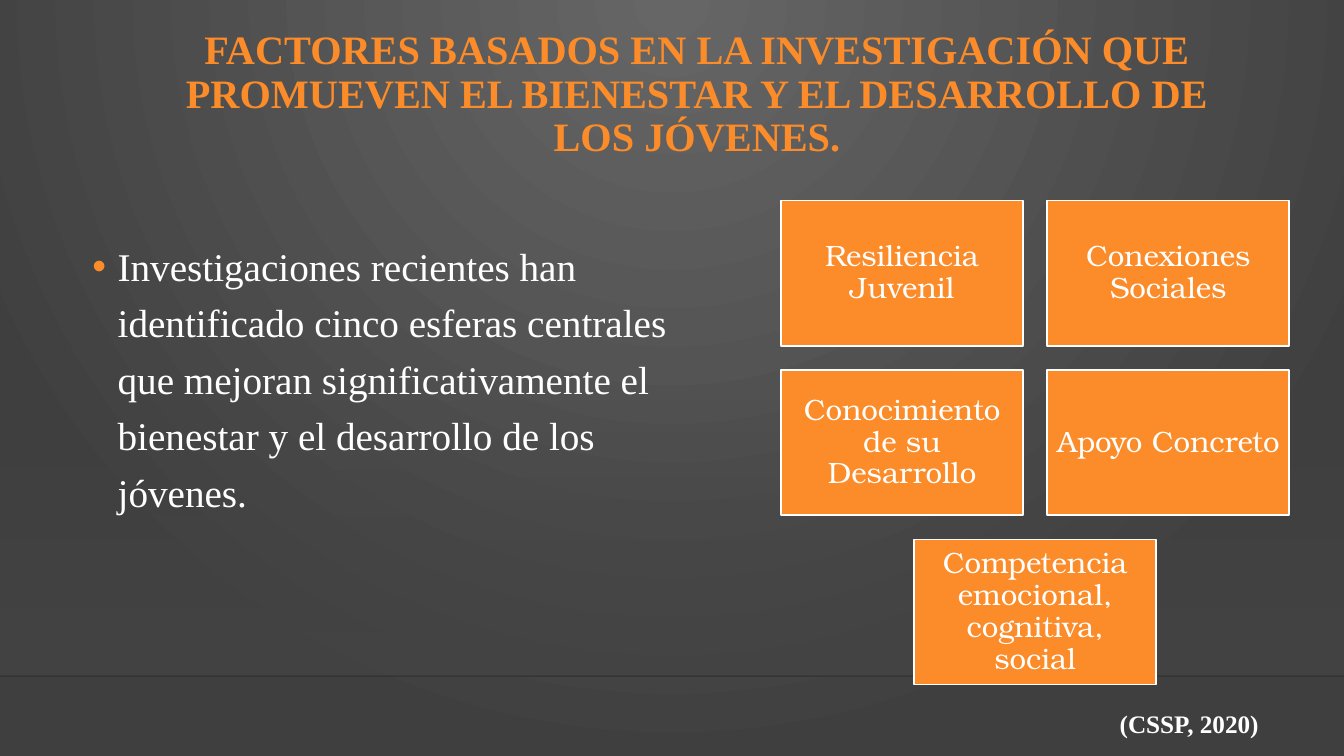
from dataclasses import dataclass

import lxml.etree
import pptx
import pptx.dml.color
import pptx.enum.dml
import pptx.enum.shapes
import pptx.enum.text
import pptx.oxml.ns
import pptx.util

Pt = pptx.util.Pt
qn = pptx.oxml.ns.qn
PP_ALIGN = pptx.enum.text.PP_ALIGN
ANCHOR = pptx.enum.text.MSO_ANCHOR
RECTANGLE = pptx.enum.shapes.MSO_SHAPE.RECTANGLE

COLORS = {
    "orange": "FB8C29",
    "white": "FFFFFF",
    "glow": "666666",
    "charcoal": "3F3F3F",
    "floor": "454545",
    "horizon": "000001",
}
SERIF = "Times New Roman"
BOX_FONT = "TeX Gyre Bonum"
SLIDE_W, SLIDE_H = 960, 540
BOX_W, BOX_H, BOX_GAP = 172.8, 103.7, 17.3
GRID_LEFT, GRID_TOP = 558, 143.3


@dataclass
class TextBlock:
    text: str
    left: float
    top: float
    width: float
    height: float
    size: float
    color: str = "white"
    bold: bool = False
    wrap: bool = True
    align: PP_ALIGN = PP_ALIGN.LEFT
    anchor: ANCHOR = ANCHOR.TOP
    line_spacing: float = 1.0
    bullet: bool = False


@dataclass
class FactorBox:
    text: str
    column: float
    row: int


TEXT_BLOCKS = [
    TextBlock("FACTORES BASADOS EN LA INVESTIGACIÓN QUE PROMUEVEN EL BIENESTAR "
              "Y EL DESARROLLO DE LOS JÓVENES.",
              114.5, 26.6, 766.8, 82.8, 28.8, color="orange", bold=True,
              align=PP_ALIGN.CENTER, anchor=ANCHOR.MIDDLE, line_spacing=0.9),
    TextBlock("Investigaciones recientes han identificado cinco esferas centrales "
              "que mejoran significativamente el bienestar y el desarrollo de los "
              "jóvenes.",
              59, 162.7, 439.2, 211.7, 28, line_spacing=1.2, bullet=True),
    TextBlock("(CSSP, 2020)", 792.7, 502.6, 115.2, 28.8, 18, bold=True, wrap=False),
]
FACTORS = [
    FactorBox("Resiliencia Juvenil", 0, 0),
    FactorBox("Conexiones Sociales", 1, 0),
    FactorBox("Conocimiento de su Desarrollo", 0, 1),
    FactorBox("Apoyo Concreto", 1, 1),
    FactorBox("Competencia emocional, cognitiva, social", 0.5, 2),
]


def rgb(name: str) -> pptx.dml.color.RGBColor:
    return pptx.dml.color.RGBColor.from_string(COLORS[name])


def set_alpha(parent, percents: list[int]) -> None:
    for color, percent in zip(parent.iter(qn("a:srgbClr")), percents):
        lxml.etree.SubElement(color, qn("a:alpha"), val=str(percent * 1000))


def set_gradient(fill, start: str, end: str) -> None:
    fill.gradient()
    for stop, name in zip(fill.gradient_stops, (start, end)):
        stop.color.rgb = rgb(name)


def style_paragraph(paragraph, font: str, size: float, color: str, bold: bool,
                    align: PP_ALIGN, line_spacing: float) -> None:
    paragraph.alignment = align
    paragraph.line_spacing = line_spacing
    paragraph.font.name = font
    paragraph.font.size = Pt(size)
    paragraph.font.bold = bold
    paragraph.font.color.rgb = rgb(color)


def add_bullet(paragraph) -> None:
    properties = paragraph._p.get_or_add_pPr()
    properties.set("marL", str(Pt(18)))
    properties.set("indent", str(-Pt(18)))
    bullet_color = lxml.etree.SubElement(properties, qn("a:buClr"))
    lxml.etree.SubElement(bullet_color, qn("a:srgbClr"), val=COLORS["orange"])
    lxml.etree.SubElement(properties, qn("a:buFont"), typeface="Arial")
    lxml.etree.SubElement(properties, qn("a:buChar"), char="•")


def draw_backdrop(slide) -> None:
    # Radial glow from the top centre
    set_gradient(slide.background.fill, "glow", "charcoal")
    gradient = next(slide.background._cSld.iter(qn("a:gradFill")))
    linear = gradient.find(qn("a:lin"))
    circle = lxml.etree.Element(qn("a:path"), {"path": "circle"})
    lxml.etree.SubElement(circle, qn("a:fillToRect"),
                          l="43000", t="0", r="43000", b="100000")
    gradient.replace(linear, circle)

    # Floor shade that fades in downwards
    floor_top, horizon_y = 285.1, 483
    floor = slide.shapes.add_shape(RECTANGLE, 0, Pt(floor_top), Pt(SLIDE_W),
                                   Pt(horizon_y - floor_top))
    floor.shadow.inherit = False
    floor.line.fill.background()
    set_gradient(floor.fill, "floor", "floor")
    floor.fill.gradient_angle = 270
    set_alpha(floor._element.spPr, [0, 80])

    # Horizon line
    horizon = slide.shapes.add_connector(pptx.enum.shapes.MSO_CONNECTOR.STRAIGHT,
                                         0, Pt(horizon_y), Pt(SLIDE_W), Pt(horizon_y))
    horizon.line.width = Pt(1)
    horizon.line.color.rgb = rgb("horizon")
    set_alpha(horizon._element.spPr, [20])
    lxml.etree.SubElement(horizon._element.spPr, qn("a:effectLst"))


def draw_text(slide, block: TextBlock) -> None:
    frame = slide.shapes.add_textbox(Pt(block.left), Pt(block.top), Pt(block.width),
                                     Pt(block.height)).text_frame
    frame.word_wrap = block.wrap
    frame.vertical_anchor = block.anchor
    if not block.wrap:
        frame.auto_size = pptx.enum.text.MSO_AUTO_SIZE.SHAPE_TO_FIT_TEXT
    paragraph = frame.paragraphs[0]
    paragraph.text = block.text
    if block.bullet:
        add_bullet(paragraph)
    style_paragraph(paragraph, SERIF, block.size, block.color, block.bold,
                    block.align, block.line_spacing)


def draw_factor(slide, factor: FactorBox) -> None:
    box = slide.shapes.add_shape(
        RECTANGLE,
        Pt(GRID_LEFT + factor.column * (BOX_W + BOX_GAP)),
        Pt(GRID_TOP + factor.row * (BOX_H + BOX_GAP)),
        Pt(BOX_W), Pt(BOX_H))
    box.shadow.inherit = False
    box.fill.solid()
    box.fill.fore_color.rgb = rgb("orange")
    box.line.color.rgb = rgb("white")
    box.line.width = Pt(1.25)
    frame = box.text_frame
    frame.word_wrap = True
    frame.vertical_anchor = ANCHOR.MIDDLE
    frame.margin_left = frame.margin_right = Pt(6.3)
    frame.margin_top = frame.margin_bottom = Pt(6.3)
    paragraph = frame.paragraphs[0]
    paragraph.text = factor.text
    style_paragraph(paragraph, BOX_FONT, 21, "white", False, PP_ALIGN.CENTER, 0.9)


def main() -> None:
    deck = pptx.Presentation()
    deck.slide_width, deck.slide_height = Pt(SLIDE_W), Pt(SLIDE_H)
    slide = deck.slides.add_slide(deck.slide_layouts[6])
    draw_backdrop(slide)
    for block in TEXT_BLOCKS:
        draw_text(slide, block)
    for factor in FACTORS:
        draw_factor(slide, factor)
    deck.save("out.pptx")


if __name__ == "__main__":
    main()
